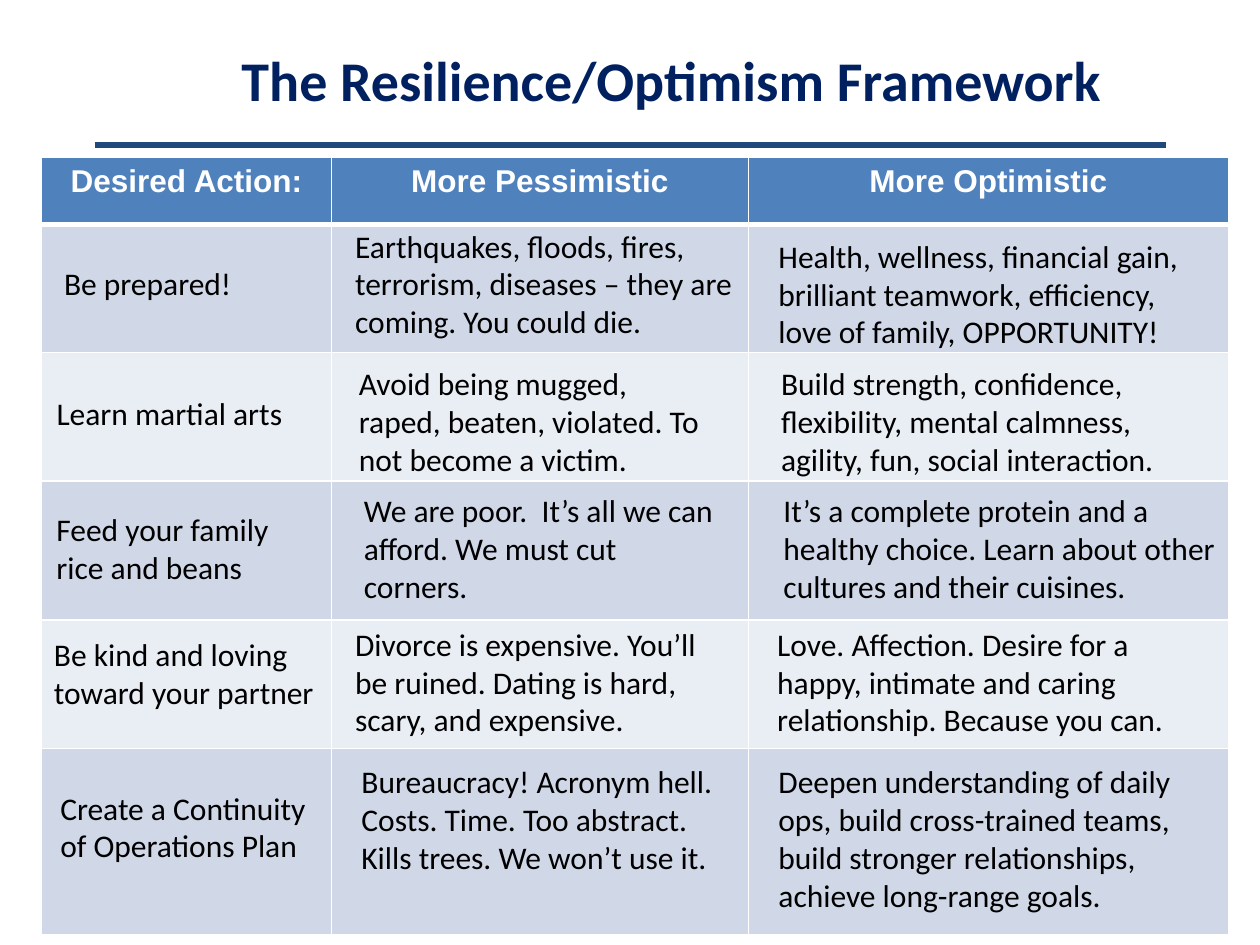
"""Build the resilience and optimism framework slide."""
from dataclasses import dataclass

from lxml.etree import SubElement
from pptx import Presentation
from pptx.dml.color import RGBColor as RGB
from pptx.enum.shapes import MSO_CONNECTOR as CONN
from pptx.enum.text import MSO_ANCHOR as ANCHOR, MSO_AUTO_SIZE as AUTO, PP_ALIGN as ALIGN
from pptx.oxml.ns import qn
from pptx.util import Inches, Pt

COLORS = {
    "title": "002060", "rule": "1F497D", "header": "4F81BD", "white": "FFFFFF",
    "odd": "D0D8E8", "even": "E9EDF4", "text": "000000",
}
HEADERS = ["Desired Action:", "More Pessimistic", "More Optimistic"]
COL_WIDTHS = [2.3, 3.31, 3.81]
ROW_HEIGHTS = [0.53, 1.02, 1.02, 1.1, 1.02, 1.48]


@dataclass
class Note:
    text: str
    left: float
    top: float
    width: float
    lines: int = 3
    wrap: bool = True

    @property
    def height(self) -> float:
        return 0.1 + 0.3 * self.lines


NOTES = [
    Note("Be prepared!", 0.41, 2.05, 1.58, 1),
    Note("Earthquakes, floods, fires, terrorism, diseases – they are coming. You could die.",
         2.72, 1.75, 3.19),
    Note("Health, wellness, financial gain, brilliant teamwork, efficiency, "
         "love of family, OPPORTUNITY!", 6.08, 1.83, 3.67),
    Note("Learn martial arts", 0.35, 3.08, 2.05, 1, False),
    Note("Avoid being mugged, raped, beaten, violated. To not become a victim.",
         2.75, 2.84, 2.97),
    Note("Build strength, confidence, flexibility, mental calmness, agility, fun, "
         "social interaction.", 6.1, 2.84, 3.65),
    Note("Feed your family rice and beans", 0.35, 4, 2.24, 2),
    Note("We are poor.  It’s all we can afford. We must cut corners.", 2.79, 3.85, 2.97),
    Note("It’s a complete protein and a healthy choice. Learn about other cultures "
         "and their cuisines.", 6.12, 3.85, 3.64),
    Note("Be kind and loving toward your partner", 0.33, 4.99, 2.39, 2),
    Note("Divorce is expensive. You’ll be ruined. Dating is hard, scary, and expensive.",
         2.72, 4.91, 3.08),
    Note("Love. Affection. Desire for a happy, intimate and caring relationship. "
         "Because you can.", 6.07, 4.91, 3.68),
    Note("Create a Continuity of Operations Plan", 0.38, 6.21, 2.21, 2),
    Note("Bureaucracy! Acronym hell. Costs. Time. Too abstract. Kills trees. "
         "We won’t use it.", 2.77, 6, 3.02),
    Note("Deepen understanding of daily ops, build cross-trained teams, build stronger "
         "relationships, achieve long-range goals.", 6.08, 6, 3.67, 4),
]


def add_run(p, text: str, size: int, font: str, color: str, bold: bool = False) -> None:
    r = p.add_run()
    r.text = text
    r.font.size, r.font.name, r.font.bold = Pt(size), font, bold
    r.font.color.rgb = RGB.from_string(COLORS[color])


def set_border(cell, side: str, width: int) -> None:
    ln = SubElement(cell._tc.get_or_add_tcPr(), qn(f"a:ln{side}"), w=str(Pt(width)))
    fill = SubElement(ln, qn("a:solidFill"))
    SubElement(fill, qn("a:srgbClr"), val=COLORS["white"])


def add_title(s) -> None:
    sp = s.shapes.title
    sp.left, sp.top, sp.width, sp.height = Inches(0.83), Inches(0), Inches(9), Inches(1.25)
    tf = sp.text_frame
    tf.vertical_anchor = ANCHOR.MIDDLE
    p = tf.paragraphs[0]
    p.alignment = ALIGN.CENTER
    add_run(p, "The Resilience/Optimism Framework", 32, "Calibri", "title", True)


def add_rule(s) -> None:
    line = s.shapes.add_connector(CONN.STRAIGHT, Inches(0.75), Inches(1.15),
                                  Inches(9.25), Inches(1.15))
    line.line.color.rgb = RGB.from_string(COLORS["rule"])
    line.line.width = Pt(3)
    SubElement(line._element.spPr, qn("a:effectLst"))


def add_grid(s) -> None:
    table = s.shapes.add_table(
        len(ROW_HEIGHTS), len(COL_WIDTHS), Inches(0.33), Inches(1.25),
        Inches(sum(COL_WIDTHS)), Inches(sum(ROW_HEIGHTS))).table
    for col, width in zip(table.columns, COL_WIDTHS):
        col.width = Inches(width)
    for i, (row, height) in enumerate(zip(table.rows, ROW_HEIGHTS)):
        row.height = Inches(height)
        fill = "header" if i == 0 else "odd" if i % 2 else "even"
        for cell, header in zip(row.cells, HEADERS):
            for side in "LRTB":
                set_border(cell, side, 3 if (i, side) in [(0, "B"), (1, "T")] else 1)
            cell.fill.solid()
            cell.fill.fore_color.rgb = RGB.from_string(COLORS[fill])
            if i == 0:
                p = cell.text_frame.paragraphs[0]
                p.alignment = ALIGN.CENTER
                add_run(p, header, 18, "Arial", "white", True)


def add_note(s, note: Note) -> None:
    tf = s.shapes.add_textbox(Inches(note.left), Inches(note.top),
                              Inches(note.width), Inches(note.height)).text_frame
    tf.word_wrap = note.wrap
    tf.auto_size = AUTO.SHAPE_TO_FIT_TEXT
    add_run(tf.paragraphs[0], note.text, 18, "Calibri", "text")


def main() -> None:
    prs = Presentation()
    prs.slide_width, prs.slide_height = Inches(10), Inches(7.5)
    s = prs.slides.add_slide(prs.slide_layouts[5])
    add_title(s)
    add_rule(s)
    add_grid(s)
    for note in NOTES:
        add_note(s, note)
    prs.save("out.pptx")


if __name__ == "__main__":
    main()
